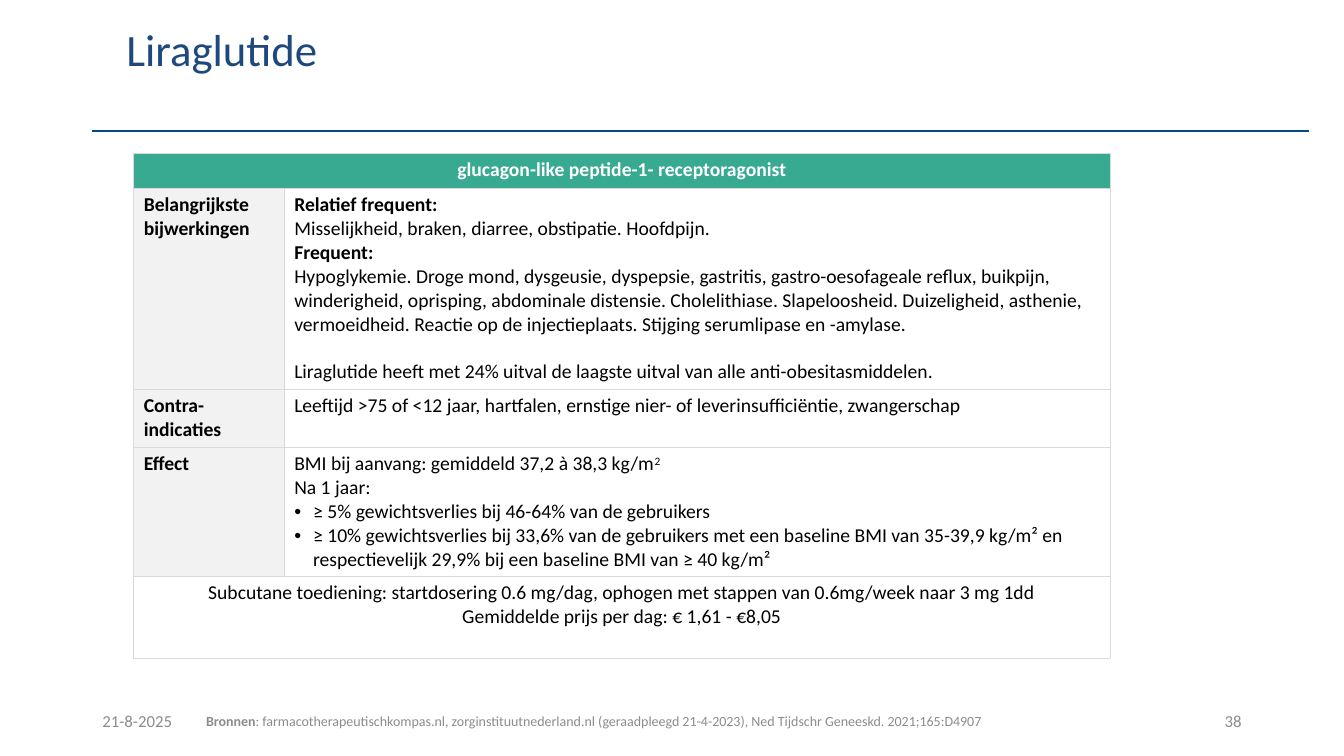
from dataclasses import dataclass

from lxml import etree
from pptx import Presentation
from pptx.dml.color import RGBColor
from pptx.enum.shapes import MSO_CONNECTOR
from pptx.enum.text import MSO_ANCHOR, PP_ALIGN
from pptx.oxml.ns import qn
from pptx.util import Pt

LEFT, CENTER, RIGHT = PP_ALIGN.LEFT, PP_ALIGN.CENTER, PP_ALIGN.RIGHT
MIDDLE = MSO_ANCHOR.MIDDLE
STRAIGHT = MSO_CONNECTOR.STRAIGHT


@dataclass(frozen=True)
class Theme:
    font: str = "Calibri"
    title: str = "1F497D"
    rule: str = "004E7F"
    header: str = "37AA91"
    label: str = "F2F2F2"
    border: str = "D9D9D9"
    white: str = "FFFFFF"
    text: str = "000000"
    muted: str = "8C8C8C"
    title_size: int = 32
    body_size: int = 14
    footer_size: int = 12
    source_size: int = 10


THEME = Theme()

HEADER = "glucagon-like peptide-1- receptoragonist"
SIDE_EFFECTS = [
    ("Relatief frequent:", {"bold": True}),
    ("Misselijkheid, braken, diarree, obstipatie. Hoofdpijn.", {}),
    ("Frequent:", {"bold": True}),
    ("Hypoglykemie. Droge mond, dysgeusie, dyspepsie, gastritis, "
     "gastro-oesofageale reflux, buikpijn, winderigheid, oprisping, "
     "abdominale distensie. Cholelithiase. Slapeloosheid. Duizeligheid, "
     "asthenie, vermoeidheid. Reactie op de injectieplaats. Stijging "
     "serumlipase en -amylase.", {}),
    ("Liraglutide heeft met 24% uitval de laagste uitval van alle "
     "anti-obesitasmiddelen.", {"before": 17}),
]
CONTRAINDICATIONS = [
    ("Leeftijd >75 of <12 jaar, hartfalen, ernstige nier- of "
     "leverinsufficiëntie, zwangerschap", {}),
]
EFFECTS = [
    ("BMI bij aanvang: gemiddeld 37,2 à 38,3 kg/m", {"superscript": "2"}),
    ("Na 1 jaar:", {}),
    ("≥ 5% gewichtsverlies bij 46-64% van de gebruikers", {"bullet": True}),
    ("≥ 10% gewichtsverlies bij 33,6% van de gebruikers met een baseline BMI "
     "van 35-39,9 kg/m² en respectievelijk 29,9% bij een baseline BMI van "
     "≥ 40 kg/m²", {"bullet": True}),
]
DOSAGE = [
    ("Subcutane toediening: startdosering 0.6 mg/dag, ophogen met stappen "
     "van 0.6mg/week naar 3 mg 1dd", {}),
    ("Gemiddelde prijs per dag: € 1,61 - €8,05", {}),
]
TOPICS = [
    ("Belangrijkste bijwerkingen", SIDE_EFFECTS),
    ("Contra-indicaties", CONTRAINDICATIONS),
    ("Effect", EFFECTS),
]
COLUMN_WIDTHS = [107.5, 590]
ROW_HEIGHTS = [25, 143.5, 41.5, 92, 58.5]


def style_run(r, size, color, bold=False):
    r.font.name = THEME.font
    r.font.size = Pt(size)
    r.font.bold = bold
    r.font.color.rgb = RGBColor.from_string(color)


def add_bullet(p, indent=13.5):
    pPr = p._p.get_or_add_pPr()
    pPr.set("marL", str(Pt(indent)))
    pPr.set("indent", str(-Pt(indent)))
    etree.SubElement(pPr, qn("a:buFont"), typeface="Arial")
    etree.SubElement(pPr, qn("a:buChar"), char="•")


def add_title(slide, text, box):
    sp = slide.shapes.title
    sp.left, sp.top, sp.width, sp.height = map(Pt, box)
    tf = sp.text_frame
    tf.text = text
    tf.vertical_anchor = MIDDLE
    p = tf.paragraphs[0]
    p.alignment = LEFT
    p.line_spacing = 0.9
    style_run(p.runs[0], THEME.title_size, THEME.title)


def add_rule(slide, x1, x2, y):
    line = slide.shapes.add_connector(STRAIGHT, Pt(x1), Pt(y), Pt(x2), Pt(y))
    line.line.color.rgb = RGBColor.from_string(THEME.rule)
    line.line.width = Pt(1.25)
    etree.SubElement(line._element.spPr, qn("a:effectLst"))


def set_borders(cell):
    tcPr = cell._tc.get_or_add_tcPr()
    for side in ("a:lnL", "a:lnR", "a:lnT", "a:lnB"):
        ln = etree.SubElement(tcPr, qn(side), w=str(Pt(0.5)))
        fill = etree.SubElement(ln, qn("a:solidFill"))
        etree.SubElement(fill, qn("a:srgbClr"), val=THEME.border)


def fill_cell(cell, paragraphs, fill=THEME.white, color=THEME.text, align=LEFT):
    """Write (text, options) paragraphs into a cell and colour it."""
    cell.fill.solid()
    cell.fill.fore_color.rgb = RGBColor.from_string(fill)
    tf = cell.text_frame
    tf.text = "\n".join(text for text, _ in paragraphs)
    for p, (_, options) in zip(tf.paragraphs, paragraphs):
        p.alignment = align
        if "before" in options:
            p.space_before = Pt(options["before"])
        if options.get("bullet"):
            add_bullet(p)
        if "superscript" in options:
            r = p.add_run()
            r.text = options["superscript"]
            r.font._element.set("baseline", "30000")
        for r in p.runs:
            style_run(r, THEME.body_size, color, options.get("bold", False))


def add_drug_table(slide, left, top):
    frame = slide.shapes.add_table(
        len(ROW_HEIGHTS), len(COLUMN_WIDTHS), Pt(left), Pt(top),
        Pt(sum(COLUMN_WIDTHS)), Pt(sum(ROW_HEIGHTS)))
    table = frame.table
    table.first_row = table.horz_banding = False
    for column, width in zip(table.columns, COLUMN_WIDTHS):
        column.width = Pt(width)
    for row, height in zip(table.rows, ROW_HEIGHTS):
        row.height = Pt(height)
    for cell in table.iter_cells():
        set_borders(cell)

    last = len(ROW_HEIGHTS) - 1
    for row in (0, last):
        table.cell(row, 0).merge(table.cell(row, 1))
    fill_cell(table.cell(0, 0), [(HEADER, {"bold": True})],
              THEME.header, THEME.white, CENTER)
    for row, (label, details) in enumerate(TOPICS, start=1):
        fill_cell(table.cell(row, 0), [(label, {"bold": True})], THEME.label)
        fill_cell(table.cell(row, 1), details)
    fill_cell(table.cell(last, 0), DOSAGE, align=CENTER)


def add_footer_text(slide, box, parts, size, align):
    """Add one line made of (text, bold) parts."""
    tf = slide.shapes.add_textbox(*map(Pt, box)).text_frame
    tf.word_wrap = True
    tf.vertical_anchor = MIDDLE
    p = tf.paragraphs[0]
    p.alignment = align
    for text, bold in parts:
        r = p.add_run()
        r.text = text
        style_run(r, size, THEME.muted, bold)


def add_footer(slide, left, top, width):
    side = 216
    add_footer_text(slide, (left, top, side, 29), [("21-8-2025", False)],
                    THEME.footer_size, LEFT)
    add_footer_text(slide, (left + width - side, top, side, 29),
                    [("38", False)], THEME.footer_size, RIGHT)
    sources = [
        ("Bronnen", True),
        (": farmacotherapeutischkompas.nl, zorginstituutnederland.nl "
         "(geraadpleegd 21-4-2023), Ned Tijdschr Geneeskd. 2021;165:D4907",
         False),
    ]
    add_footer_text(slide, (left - 10, top - 1, 736, 31), sources,
                    THEME.source_size, CENTER)


def main():
    prs = Presentation()
    prs.slide_width, prs.slide_height = Pt(960), Pt(540)
    slide = prs.slides.add_slide(prs.slide_layouts[5])
    add_rule(slide, 66, 935, 93.5)
    add_footer(slide, 66, 500.5, 828)
    add_title(slide, "Liraglutide", (83, -1, 828, 76))
    add_drug_table(slide, 95.5, 109.5)
    prs.save("out.pptx")


if __name__ == "__main__":
    main()
